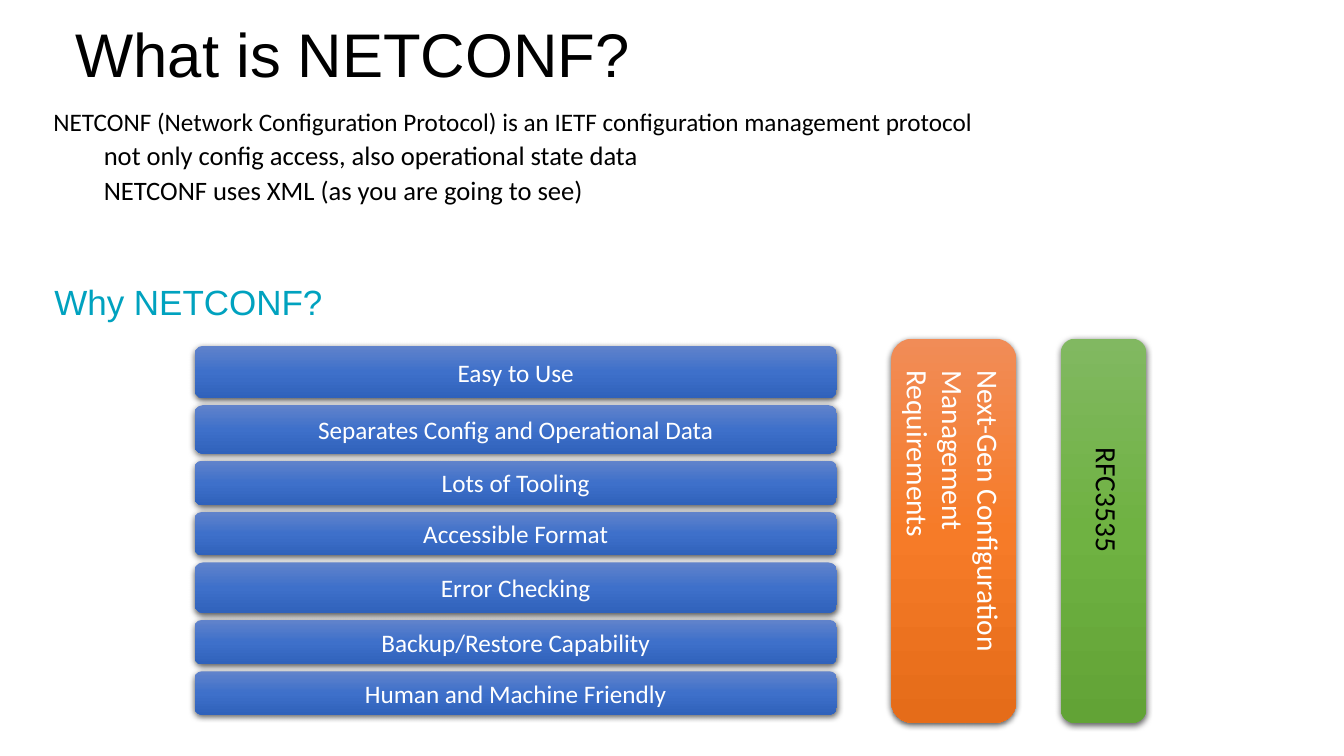
from dataclasses import dataclass

from pptx import Presentation
from pptx import util as u
from pptx.dml.color import RGBColor
from pptx.enum import shapes, text
from pptx.oxml import parse_xml
from pptx.oxml.ns import nsdecls

# Content: lengths in px, 100 to the inch
TITLE = "What is NETCONF?"
INTRO = [
    # level, text
    (0, "NETCONF (Network Configuration Protocol) is an IETF configuration management protocol"),
    (1, "not only config access, also operational state data"),
    (1, "NETCONF uses XML (as you are going to see)"),
]
QUESTION = "Why NETCONF?"
BENEFITS = [
    # text, bar height
    ("Easy to Use", 52),
    ("Separates Config and Operational Data", 48),
    ("Lots of Tooling", 44),
    ("Accessible Format", 43),
    ("Error Checking", 50),
    ("Backup/Restore Capability", 44),
    ("Human and Machine Friendly", 43),
]
PILLARS = [
    # text, gradient, text colour, pillar box, box of the turned text
    ("Next-Gen Configuration Management Requirements", "orange", "white",
     (884, 336, 124, 381), (770, 469, 350, 121)),
    ("RFC3535", "green", "black",
     (1052, 336, 85, 381), (1003, 502, 191, 49)),
]
BAR_LEFT, BAR_TOP, BAR_WIDTH, BAR_GAP = 193, 343, 637, 7


@dataclass(frozen=True)
class Theme:
    head: str = "Arial"
    body: str = "Calibri"
    black: str = "000000"
    white: str = "FFFFFF"
    teal: str = "00A2BF"
    blue: tuple = ("6183CB", "3E70CA", "3062BB")
    orange: tuple = ("F18C57", "F67B28", "E56C19")
    green: tuple = ("81B861", "6FB242", "62A336")
    title: int = 44
    question: int = 25
    pillar: int = 21
    detail: int = 19
    base: int = 18


T = Theme()


def px(n):
    return u.Emu(n * 9144)


def box(values):
    return [px(v) for v in values]


def style(p, size, color, font=T.body, spacing=None):
    p.line_spacing = spacing
    for r in p.runs:
        r.font.size, r.font.name = u.Pt(size), font
        r.font.color.rgb = RGBColor.from_string(color)


def set_insets(tf):
    tf.word_wrap = True
    tf.margin_left = tf.margin_right = px(13)
    tf.margin_top = tf.margin_bottom = px(7)


def add_text(s, at, grow=True):
    sp = s.shapes.add_textbox(*box(at))
    set_insets(sp.text_frame)
    if grow:
        sp.text_frame.auto_size = text.MSO_AUTO_SIZE.SHAPE_TO_FIT_TEXT
    return sp


def add_block(s, at, colors):
    """Rounded block with a vertical gradient and a soft shadow below."""
    sp = s.shapes.add_shape(shapes.MSO_SHAPE.ROUNDED_RECTANGLE, *box(at))
    stops = "".join(f'<a:gs pos="{i * 50000}"><a:srgbClr val="{c}"/></a:gs>'
                    for i, c in enumerate(colors))
    props = sp._element.spPr
    props.append(parse_xml(
        f'<a:gradFill {nsdecls("a")} rotWithShape="1"><a:gsLst>{stops}</a:gsLst>'
        '<a:lin ang="5400000" scaled="0"/></a:gradFill>'))
    sp.line.fill.background()
    props.append(parse_xml(
        f'<a:effectLst {nsdecls("a")}><a:outerShdw blurRad="{u.Pt(4.5)}" '
        f'dist="{u.Pt(1.5)}" dir="5400000" algn="ctr" rotWithShape="0">'
        '<a:srgbClr val="000000"><a:alpha val="63000"/></a:srgbClr>'
        '</a:outerShdw></a:effectLst>'))
    return sp


def build():
    prs = Presentation()
    prs.slide_width, prs.slide_height = px(1333), px(750)
    s = prs.slides.add_slide(prs.slide_layouts[5])

    # Title
    sp = s.shapes.title
    sp.left, sp.top, sp.width, sp.height = box((65, -15, 1150, 145))
    tf = sp.text_frame
    tf.text = TITLE
    tf.auto_size = text.MSO_AUTO_SIZE.NONE
    tf.vertical_anchor = text.MSO_ANCHOR.MIDDLE
    tf.paragraphs[0].alignment = text.PP_ALIGN.LEFT
    style(tf.paragraphs[0], T.title, T.black, T.head, 0.9)

    # Introduction
    tf = add_text(s, (40, 95, 1200, 150)).text_frame
    tf.text = "\n".join(line for _, line in INTRO)
    for p, (level, _) in zip(tf.paragraphs, INTRO):
        p.level = level
        p._p.get_or_add_pPr().set("marL", str(px(50 * level)))
        style(p, T.detail if level else T.base, T.black, spacing=1.1)

    # Question
    tf = add_text(s, (41, 279, 1093, 107), grow=False).text_frame
    tf.text = QUESTION
    style(tf.paragraphs[0], T.question, T.teal, T.head, 0.8)

    # Stack of benefits
    top = BAR_TOP
    for label, height in BENEFITS:
        tf = add_block(s, (BAR_LEFT, top, BAR_WIDTH, height), T.blue).text_frame
        set_insets(tf)
        tf.text = label
        tf.vertical_anchor = text.MSO_ANCHOR.MIDDLE
        tf.paragraphs[0].alignment = text.PP_ALIGN.CENTER
        style(tf.paragraphs[0], T.base, T.white)
        top += height + BAR_GAP

    # Pillars with turned text
    for label, gradient, color, pillar_at, text_at in PILLARS:
        add_block(s, pillar_at, getattr(T, gradient))
        sp = add_text(s, text_at)
        sp.rotation = 90
        sp.text_frame.text = label
        style(sp.text_frame.paragraphs[0], T.pillar, getattr(T, color))

    prs.save("out.pptx")


if __name__ == "__main__":
    build()
